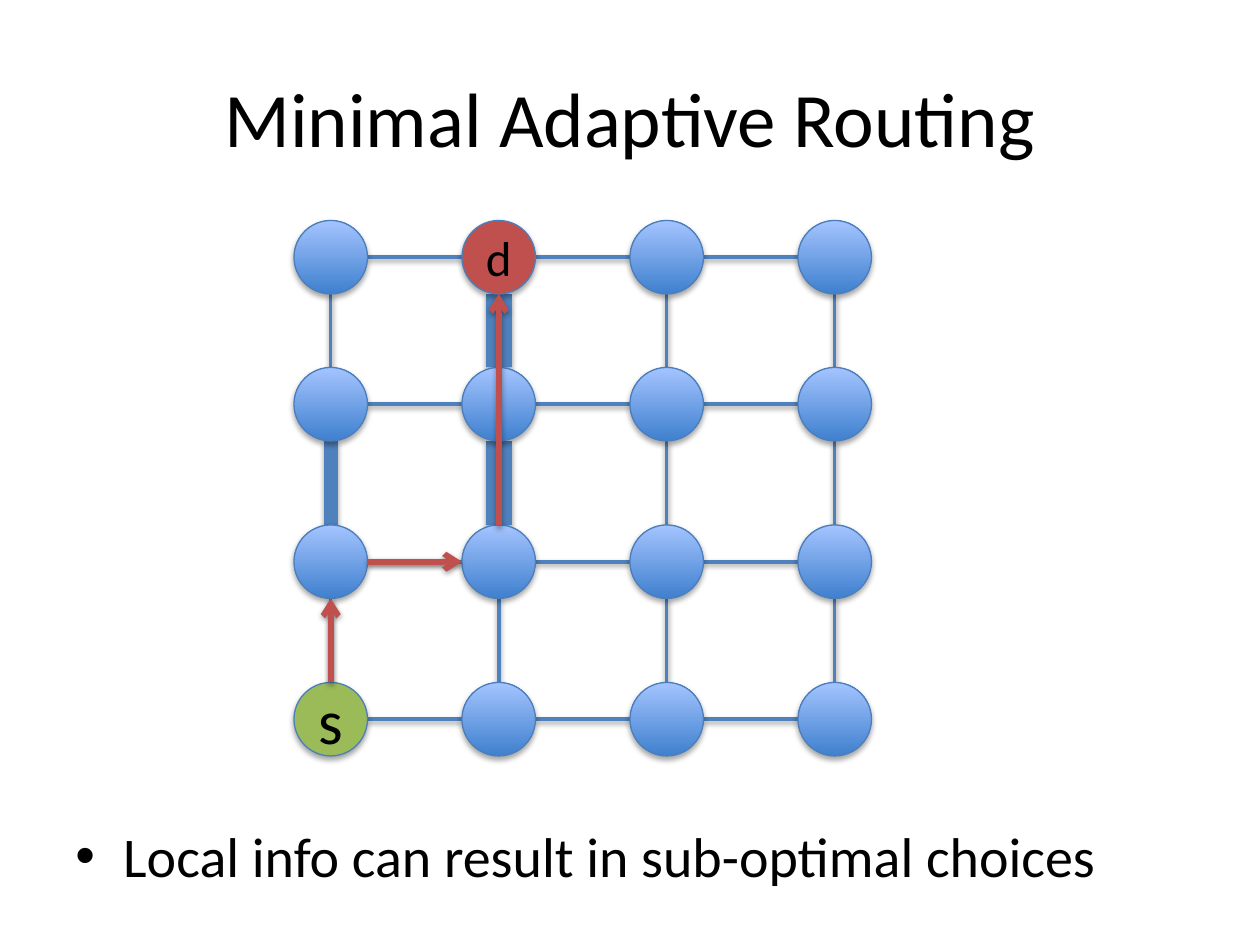
"""Build a slide on minimal adaptive routing in a 4 x 4 mesh network."""
from lxml import etree
from pptx import Presentation
from pptx.dml.color import RGBColor
from pptx.enum.shapes import MSO_CONNECTOR, MSO_SHAPE
from pptx.enum.text import MSO_ANCHOR, PP_ALIGN
from pptx.oxml.ns import qn
from pptx.util import Inches, Pt

STRAIGHT = MSO_CONNECTOR.STRAIGHT
OVAL = MSO_SHAPE.OVAL
MIDDLE = MSO_ANCHOR.MIDDLE
CENTER, LEFT = PP_ALIGN.CENTER, PP_ALIGN.LEFT

COLORS = {
    "text": "000000",
    "link": "4F81BD",
    "outline": "4B7EBC",
    "node_bottom": "3F80CE",
    "node_top": "A4C4FF",
    "route": "C0504D",
    "source": "9BBB59",
}
RGB = {name: RGBColor.from_string(value) for name, value in COLORS.items()}

prs = Presentation()
prs.slide_width, prs.slide_height = Inches(10), Inches(7.5)
W, H = prs.slide_width, prs.slide_height
U = W // 120
COLS = [28 * U + 16 * U * i for i in range(4)]
ROWS = [21 * U, 35 * U, 50 * U, 65 * U]
D = 7 * U
R = D // 2


def write(sp, text, size, align):
    tf = sp.text_frame
    tf.text = text
    tf.word_wrap = True
    p = tf.paragraphs[0]
    p.alignment = align
    r = p.runs[0]
    r.font.size = Pt(size)
    r.font.name = "Calibri"
    r.font.color.rgb = RGB["text"]
    return p


def finish(sp, color, width, alpha, dist):
    sp.line.color.rgb = RGB[color]
    sp.line.width = Pt(width)
    effects = etree.SubElement(sp._element.spPr, qn("a:effectLst"))
    shadow = etree.SubElement(effects, qn("a:outerShdw"), blurRad="40000",
                              dist=str(dist), dir="5400000", rotWithShape="0")
    tint = etree.SubElement(shadow, qn("a:srgbClr"), val=COLORS["text"])
    etree.SubElement(tint, qn("a:alpha"), val=str(alpha * 1000))


s = prs.slides.add_slide(prs.slide_layouts[5])
title = s.shapes.title
title.left, title.top = int(W * 0.05), int(H * 0.04)
title.width, title.height = int(W * 0.9), H // 6
write(title, "Minimal Adaptive Routing", 44, CENTER)
title.text_frame.vertical_anchor = MIDDLE

body = s.shapes.add_textbox(int(W * 0.05), int(H * 0.863), int(W * 0.9), H // 12)
p = write(body, "Local info can result in sub-optimal choices", 32, LEFT)
pPr = p._p.get_or_add_pPr()
pPr.set("marL", str(Inches(0.38)))
pPr.set("indent", str(-Inches(0.38)))
etree.SubElement(pPr, qn("a:buFont"), typeface="Arial")
etree.SubElement(pPr, qn("a:buChar"), char="•")

# (column, row) of each end, counted from the top left node
congested = {((0, 1), (0, 2)): 8, ((1, 0), (1, 1)): 15, ((1, 1), (1, 2)): 15}
routes = [((0, 3), (0, 2)), ((0, 2), (1, 2)), ((1, 2), (1, 0))]
nodes = [(c, r) for r in range(4) for c in range(4)]
links = [((c, r), (c + 1, r)) for c, r in nodes if c < 3]
links += [((c, r), (c, r + 1)) for c, r in nodes if r < 3]
labels = {(1, 0): ("d", 28, "route"), (0, 3): ("s", 36, "source")}

edges = [(a, b, "link", congested.get((a, b), 2)) for a, b in links]
arrows = [(a, b, "route", 3.25) for a, b in routes]
for layer in (edges, nodes, arrows):
    if layer is nodes:
        for c, r in nodes:
            sp = s.shapes.add_shape(OVAL, COLS[c], ROWS[r], D, D)
            if (c, r) in labels:
                text, size, color = labels[c, r]
                sp.fill.solid()
                sp.fill.fore_color.rgb = RGB[color]
                write(sp, text, size, CENTER)
                sp.text_frame.vertical_anchor = MIDDLE
            else:
                sp.fill.gradient()
                sp.fill.gradient_angle = 90
                for stop, color in zip(sp.fill.gradient_stops, ("node_bottom", "node_top")):
                    stop.color.rgb = RGB[color]
            finish(sp, "outline", 0.75, 35, 23000)
        continue
    for (c1, r1), (c2, r2), color, width in layer:
        dx = (c2 > c1) - (c2 < c1)
        dy = (r2 > r1) - (r2 < r1)
        cxn = s.shapes.add_connector(
            STRAIGHT,
            COLS[c1] + R + dx * R, ROWS[r1] + R + dy * R,
            COLS[c2] + R - dx * R, ROWS[r2] + R - dy * R)
        finish(cxn, color, width, 38, 20000)
        if layer is arrows:
            ln = cxn._element.spPr.find(qn("a:ln"))
            etree.SubElement(ln, qn("a:tailEnd"), type="arrow")

prs.save("out.pptx")
